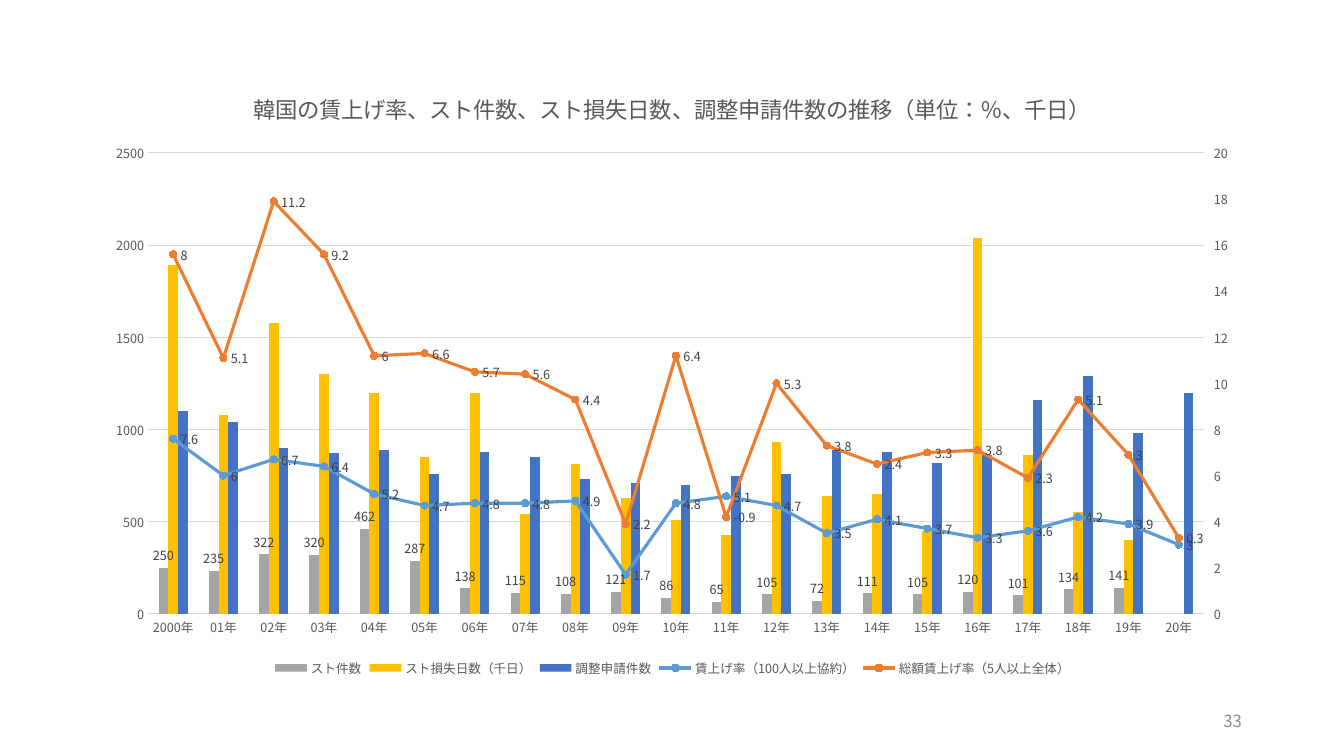
from copy import deepcopy
from lxml import etree
from pptx import Presentation
from pptx.chart.data import CategoryChartData
from pptx.dml.color import RGBColor
from pptx.enum.chart import (XL_CHART_TYPE, XL_LABEL_POSITION, XL_LEGEND_POSITION,
                             XL_MARKER_STYLE, XL_TICK_MARK)
from pptx.enum.text import MSO_ANCHOR, PP_ALIGN
from pptx.oxml import parse_xml
from pptx.oxml.ns import nsdecls, qn
from pptx.util import Inches, Pt

COLUMNS = XL_CHART_TYPE.COLUMN_CLUSTERED
BOTTOM = XL_LEGEND_POSITION.BOTTOM
CIRCLE = XL_MARKER_STYLE.CIRCLE
NO_TICK, TICK_OUT = XL_TICK_MARK.NONE, XL_TICK_MARK.OUTSIDE
ABOVE, BESIDE = XL_LABEL_POSITION.OUTSIDE_END, XL_LABEL_POSITION.RIGHT
RIGHT, MIDDLE = PP_ALIGN.RIGHT, MSO_ANCHOR.MIDDLE

THEME = {
    "font": "Noto Sans CJK JP",
    "text": "595959", "label": "404040", "page": "8C8C8C", "grid": "D9D9D9",
    "gray": "A5A5A5", "gold": "FFC000", "blue": "4472C4",
    "sky": "5B9BD5", "orange": "ED7D31",
    "title_size": 16, "page_size": 12, "chart_size": 9,
}

TITLE = "韓国の賃上げ率、スト件数、スト損失日数、調整申請件数の推移（単位：％、千日）"
YEARS = ["2000年"] + [f"{y:02}年" for y in range(1, 21)]
BARS = [
    ("スト件数", "gray",
     [250, 235, 322, 320, 462, 287, 138, 115, 108, 121, 86,
      65, 105, 72, 111, 105, 120, 101, 134, 141, None]),
    ("スト損失日数（千日）", "gold",
     [1890, 1080, 1580, 1300, 1200, 850, 1200, 540, 810, 630, 510,
      430, 930, 640, 650, 450, 2040, 860, 550, 400, None]),
    ("調整申請件数", "blue",
     [1100, 1040, 900, 870, 890, 760, 880, 850, 730, 710, 700,
      750, 760, 890, 880, 820, 860, 1160, 1290, 980, 1200]),
]
LINES = [
    ("賃上げ率（100人以上協約）", "sky",
     [7.6, 6, 6.7, 6.4, 5.2, 4.7, 4.8, 4.8, 4.9, 1.7, 4.8,
      5.1, 4.7, 3.5, 4.1, 3.7, 3.3, 3.6, 4.2, 3.9, 3]),
    ("総額賃上げ率（5人以上全体）", "orange",
     [8, 5.1, 11.2, 9.2, 6, 6.6, 5.7, 5.6, 4.4, 2.2, 6.4,
      -0.9, 5.3, 3.8, 2.4, 3.3, 3.8, 2.3, 5.1, 3, 0.3]),
]


def px(*lengths):
    return [Inches(n / 100.8) for n in lengths]


def set_font(font, size, color):
    font.color.rgb = RGBColor.from_string(THEME[color])
    values = {"name": THEME["font"], "size": Pt(THEME[size]), "bold": False}
    for name, value in values.items():
        setattr(font, name, value)


prs = Presentation()
prs.slide_width, prs.slide_height = px(1344, 756)
s = prs.slides.add_slide(prs.slide_layouts[6])

tf = s.shapes.add_textbox(*px(950, 701, 302, 40)).text_frame
tf.word_wrap = True
tf.vertical_anchor = MIDDLE
p = tf.paragraphs[0]
p.alignment = RIGHT
r = p.add_run()
r.text = "33"
set_font(r.font, "page_size", "page")

data = CategoryChartData()
data.categories = YEARS
for name, color, values in BARS + LINES:
    data.add_series(name, values)
chart = s.shapes.add_chart(COLUMNS, *px(93, 69, 1159, 612), data).chart
set_font(chart.font, "chart_size", "text")

chart.has_title = True
p = chart.chart_title.text_frame.paragraphs[0]
r = p.add_run()
r.text = TITLE
set_font(r.font, "title_size", "text")

chart.has_legend = True
chart.legend.position = BOTTOM
chart.legend.include_in_layout = False
set_font(chart.legend.font, "chart_size", "text")

cat_axis, val_axis = chart.category_axis, chart.value_axis
for axis in (cat_axis, val_axis):
    axis.major_tick_mark = axis.minor_tick_mark = NO_TICK
    set_font(axis.tick_labels.font, "chart_size", "text")
val_axis.format.line.fill.background()
val_axis.minimum_scale, val_axis.maximum_scale, val_axis.major_unit = 0, 2500, 500
for line in (cat_axis.format.line, val_axis.major_gridlines.format.line):
    line.color.rgb = RGBColor.from_string(THEME["grid"])
    line.width = Pt(0.75)

bar_chart = next(chart.element.iter(qn("c:barChart")))
plot_area = bar_chart.getparent()
line_chart = parse_xml(
    f'<c:lineChart {nsdecls("c")}><c:grouping val="stacked"/><c:varyColors val="0"/>'
    '<c:marker val="1"/><c:axId val="5001"/><c:axId val="5002"/></c:lineChart>'
) if hasattr(chart, "element") else None
for ser in bar_chart.findall(qn("c:ser"))[len(BARS):]:
    for flag in ser.findall(qn("c:invertIfNegative")):
        ser.remove(flag)
    line_chart.find(qn("c:marker")).addprevious(ser)
bar_chart.addnext(line_chart)

right_cat = deepcopy(plot_area.find(qn("c:catAx")))
right_val = deepcopy(plot_area.find(qn("c:valAx")))
right_val.remove(right_val.find(qn("c:majorGridlines")))
for axis, own, other in ((right_cat, "5001", "5002"), (right_val, "5002", "5001")):
    axis.find(qn("c:axId")).set("val", own)
    axis.find(qn("c:crossAx")).set("val", other)
right_cat.find(qn("c:delete")).set("val", "1")
right_val.find(qn("c:axPos")).set("val", "r")
right_val.find(qn("c:crosses")).set("val", "max")
plot_area.find(qn("c:valAx")).addnext(right_val)
right_val.addnext(right_cat)
right_axis = type(val_axis)(right_val)
right_axis.maximum_scale, right_axis.major_unit = 20, 2
right_axis.major_tick_mark = TICK_OUT

bars, lines = chart.plots
bars.gap_width, bars.overlap = 219, 0
bars.vary_by_categories = False
for ser, (name, color, values) in zip(bars.series, BARS):
    ser.format.fill.solid()
    ser.format.fill.fore_color.rgb = RGBColor.from_string(THEME[color])
for ser, (name, color, values) in zip(lines.series, LINES):
    rgb = RGBColor.from_string(THEME[color])
    ser.smooth = False
    ser.format.line.color.rgb = rgb
    ser.format.line.width = Pt(2.25)
    ser.marker.style, ser.marker.size = CIRCLE, 5
    ser.marker.format.fill.solid()
    ser.marker.format.fill.fore_color.rgb = rgb
    ser.marker.format.line.color.rgb = rgb
for ser, place in [(bars.series[0], ABOVE)] + [(ser, BESIDE) for ser in lines.series]:
    labels = ser.data_labels
    labels.show_value = True
    labels.position = place
    set_font(labels.font, "chart_size", "label")

layout = plot_area.find(qn("c:layout"))
if layout is None:
    layout = etree.Element(qn("c:layout"))
    plot_area.insert(0, layout)
manual = etree.SubElement(layout, qn("c:manualLayout"))
for tag, value in {"layoutTarget": "inner", "xMode": "edge", "yMode": "edge",
                   "x": 55 / 1159, "y": 84 / 612,
                   "w": 1056 / 1159, "h": 461 / 612}.items():
    etree.SubElement(manual, qn(f"c:{tag}")).set("val", str(value))

for latin in list(plot_area.getroottree().iter(qn("a:latin"))):
    east_asian = etree.Element(qn("a:ea"))
    east_asian.set("typeface", THEME["font"])
    latin.addnext(east_asian)

prs.save("out.pptx")
